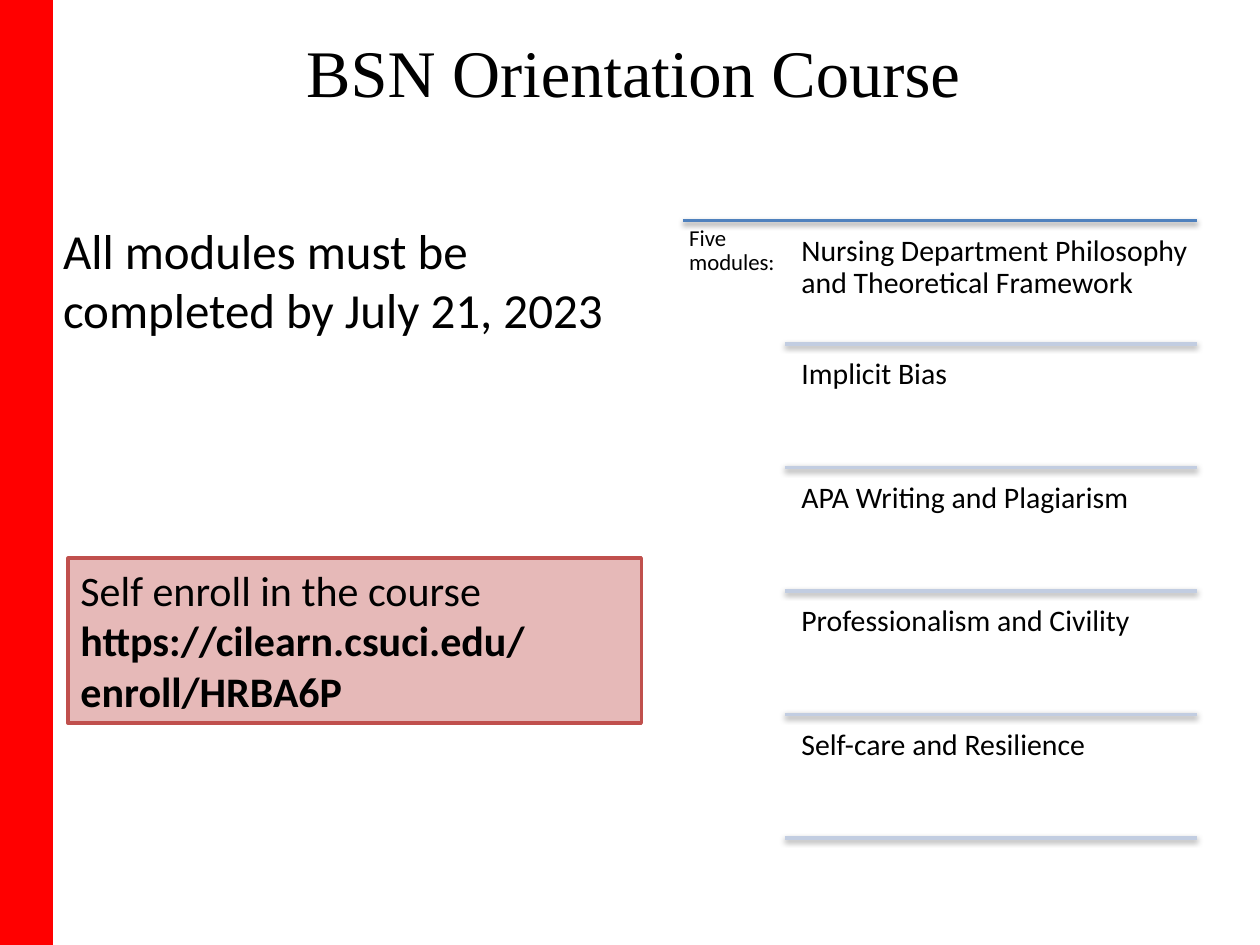
from dataclasses import dataclass

from lxml import etree
from pptx import Presentation
from pptx.dml.color import RGBColor
from pptx.enum import shapes, text
from pptx.oxml import ns
from pptx.util import Inches, Pt


@dataclass(frozen=True)
class Theme:
    ink: str = "000000"
    bar: str = "FF0000"
    callout_fill: str = "E6B9B8"
    callout_line: str = "C0504D"
    top_rule: str = "4F81BD"
    module_rule: str = "C2CDE1"
    heading_font: str = "Times New Roman"
    body_font: str = "Calibri"
    title_size: int = 38
    body_size: int = 28
    callout_size: int = 24
    module_size: int = 17
    label_size: int = 13
    rule_width: int = 2


class SlideBuilder:
    def __init__(self, slide, theme):
        self.slide = slide
        self.theme = theme

    def fill_text(self, frame, lines, size, font=None, inset=(0, 0, 0, 0), spacing=None,
                  grow=False):
        """Fill a text frame with (words, bold) lines; inset is left, top, right, bottom."""
        left, top, right, bottom = map(Inches, inset)
        frame_format = {
            "word_wrap": True,
            "vertical_anchor": text.MSO_ANCHOR.TOP,
            "auto_size": (text.MSO_AUTO_SIZE.SHAPE_TO_FIT_TEXT if grow
                          else text.MSO_AUTO_SIZE.NONE),
            "margin_left": left, "margin_top": top,
            "margin_right": right, "margin_bottom": bottom,
        }
        for name, value in frame_format.items():
            setattr(frame, name, value)
        for index, (words, bold) in enumerate(lines):
            paragraph = frame.add_paragraph() if index else frame.paragraphs[0]
            paragraph.alignment = text.PP_ALIGN.LEFT
            paragraph.line_spacing = spacing
            run = paragraph.add_run()
            run.text = words
            font_format = {"name": font or self.theme.body_font,
                           "size": Pt(size), "bold": bold}
            for name, value in font_format.items():
                setattr(run.font, name, value)
            run.font.color.rgb = RGBColor.from_string(self.theme.ink)

    def textbox(self, place, words, size, **options):
        box = self.slide.shapes.add_textbox(*map(Inches, place))
        self.fill_text(box.text_frame, [(words, False)], size, **options)

    def rectangle(self, place, fill, line=None):
        block = self.slide.shapes.add_shape(
            shapes.MSO_SHAPE.RECTANGLE, *map(Inches, place))
        block.shadow.inherit = False
        block.fill.solid()
        block.fill.fore_color.rgb = RGBColor.from_string(fill)
        if line:
            block.line.color.rgb = RGBColor.from_string(line)
            block.line.width = Pt(self.theme.rule_width)
        else:
            block.line.fill.background()
        return block

    def rule(self, left, right, y, color):
        """Draw a horizontal line with a soft shadow below it."""
        line = self.slide.shapes.add_connector(
            shapes.MSO_CONNECTOR.STRAIGHT, *map(Inches, (left, y, right, y)))
        line.line.color.rgb = RGBColor.from_string(color)
        line.line.width = Pt(self.theme.rule_width)
        effects = etree.SubElement(line._element.spPr, ns.qn("a:effectLst"))
        shadow = etree.SubElement(effects, ns.qn("a:outerShdw"), blurRad="40000",
                                  dist="20000", dir="5400000", rotWithShape="0")
        tint = etree.SubElement(shadow, ns.qn("a:srgbClr"), val="000000")
        etree.SubElement(tint, ns.qn("a:alpha"), val="38000")


MODULES = [
    "Nursing Department Philosophy and Theoretical Framework",
    "Implicit Bias",
    "APA Writing and Plagiarism",
    "Professionalism and Civility",
    "Self-care and Resilience",
]


def main():
    deck = Presentation()
    deck.slide_width, deck.slide_height = Inches(10), Inches(7.5)
    theme = Theme()
    builder = SlideBuilder(deck.slides.add_slide(deck.slide_layouts[6]), theme)

    builder.rectangle((0, 0, 0.42, 7.5), theme.bar)
    builder.textbox((2.43, 0.18, 6.05, 1.3), "BSN Orientation Course",
                    theme.title_size, font=theme.heading_font, inset=(0, 0.07, 0, 0))
    builder.textbox((0.5, 1.75, 4.42, 2.83),
                    "All modules must be completed by July 21, 2023", theme.body_size)

    top, right, pitch, gap = 1.75, 9.5, 0.98, 0.05
    builder.rule(5.42, right, top, theme.top_rule)
    builder.textbox((5.42, top, 0.82, 4.95), "Five modules:", theme.label_size,
                    inset=(0.05,) * 4, spacing=0.9)
    for index, module in enumerate(MODULES):
        row = top + index * pitch
        builder.textbox((6.29, row + gap, 3.21, pitch - gap), module,
                        theme.module_size, inset=(0.07,) * 4, spacing=0.9)
        builder.rule(6.23, right, row + pitch, theme.module_rule)

    callout = builder.rectangle((0.54, 4.43, 4.55, 1.31),
                                theme.callout_fill, theme.callout_line)
    builder.fill_text(callout.text_frame,
                      [("Self enroll in the course", False),
                       ("https://cilearn.csuci.edu/enroll/HRBA6P", True)],
                      theme.callout_size, inset=(0.1, 0.05, 0.1, 0.05), grow=True)

    deck.save("out.pptx")


if __name__ == "__main__":
    main()
